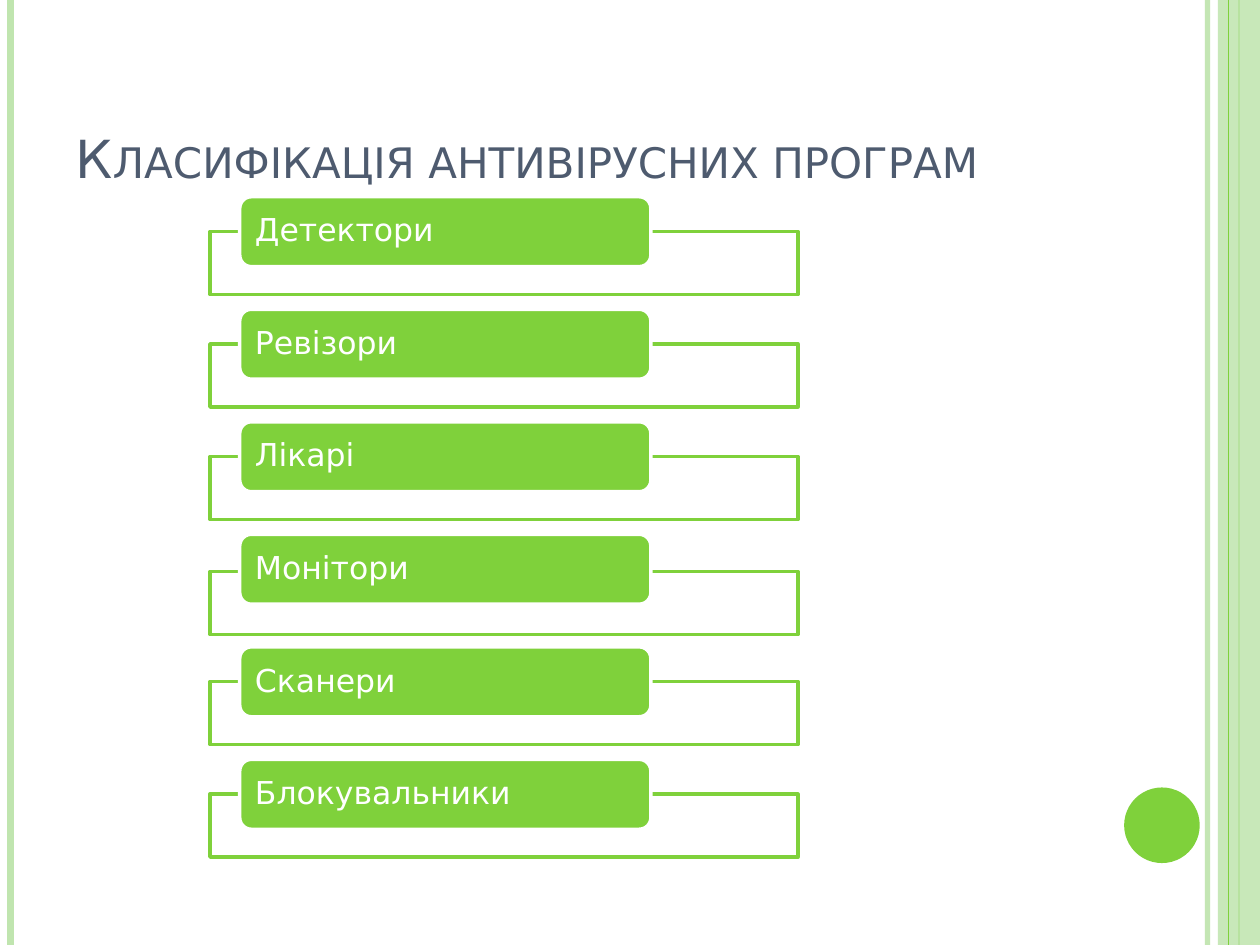
from lxml import etree
from pptx import Presentation
from pptx.dml.color import RGBColor
from pptx.enum import shapes, text
from pptx.oxml.ns import qn
from pptx.util import Pt

TITLE = "Класифікація антивірусних програм"
# Label and the downward shift of its frame
CLASSES = [
    ("Детектори", 0), ("Ревізори", 0), ("Лікарі", 0),
    ("Монітори", 1.4), ("Сканери", 0), ("Блокувальники", 0),
]
THEME = {
    "font": "DejaVu Sans", "title_size": 30, "label_size": 18,
    "green": "7FD13B", "pale": "C0E5AF", "slate": "4E5B6F", "white": "FFFFFF",
}
SLIDE_WIDTH, SLIDE_HEIGHT = 720, 540
# x, colour, width, opacity in percent
OUTER_RULES = [(690, "pale", 3, 93), (6, "pale", 4.5, 100), (708, "green", 1.5, 100)]
INNER_RULE = (702, "green", 0.75, 100)
SIDE_BAND = (696, 0, 24, SLIDE_HEIGHT)
DOT = (642.4, 450, 43.2, 43.2)
TITLE_BOX = (36, 21.6, 588, 90)
FRAME = (120, 132.3, 336, 36)
LABEL = (137, 112.4, 235, 40)
PITCH = 64.3


def color(name):
    return RGBColor.from_string(THEME[name])


def set_opacity(fill_parent, percent):
    if percent < 100:
        tint = fill_parent.find(".//" + qn("a:srgbClr"))
        etree.SubElement(tint, qn("a:alpha"), val=str(percent * 1000))


def add_rule(slide, x, name, width, opacity):
    rule = slide.shapes.add_connector(
        shapes.MSO_CONNECTOR.STRAIGHT, Pt(x), Pt(0), Pt(x), Pt(SLIDE_HEIGHT))
    rule.line.color.rgb = color(name)
    rule.line.width = Pt(width)
    properties = rule._element.spPr
    set_opacity(properties, opacity)
    etree.SubElement(properties, qn("a:effectLst"))


def add_box(slide, kind, box, fill, line=None, opacity=100):
    shape = slide.shapes.add_shape(kind, *map(Pt, box))
    shape.shadow.inherit = False
    shape.fill.solid()
    shape.fill.fore_color.rgb = color(fill)
    set_opacity(shape._element.spPr, opacity)
    if line:
        shape.line.color.rgb = color(line)
        shape.line.width = Pt(2)
    else:
        shape.line.fill.background()
    return shape


def write(shape, words, size, name, anchor):
    frame = shape.text_frame
    frame.word_wrap = True
    frame.vertical_anchor = anchor
    paragraph = frame.paragraphs[0]
    paragraph.text = words
    paragraph.alignment = text.PP_ALIGN.LEFT
    paragraph.font.name = THEME["font"]
    paragraph.font.size = Pt(THEME[size])
    paragraph.font.color.rgb = color(name)
    return paragraph


def add_class(slide, row, words, shift):
    left, top, width, height = FRAME
    add_box(slide, shapes.MSO_SHAPE.RECTANGLE,
            (left, top + row * PITCH + shift, width, height), "white", "green", 90)
    left, top, width, height = LABEL
    label = add_box(slide, shapes.MSO_SHAPE.ROUNDED_RECTANGLE,
                    (left, top + row * PITCH, width, height), "green", "white")
    frame = label.text_frame
    frame.margin_left = frame.margin_right = Pt(6.8)
    frame.margin_top = frame.margin_bottom = Pt(0)
    paragraph = write(label, words, "label_size", "white", text.MSO_ANCHOR.MIDDLE)
    paragraph.line_spacing = 0.9


def main():
    presentation = Presentation()
    presentation.slide_width = Pt(SLIDE_WIDTH)
    presentation.slide_height = Pt(SLIDE_HEIGHT)
    slide = presentation.slides.add_slide(presentation.slide_layouts[6])

    for rule in OUTER_RULES:
        add_rule(slide, *rule)
    add_box(slide, shapes.MSO_SHAPE.RECTANGLE, SIDE_BAND, "pale", opacity=87)
    add_rule(slide, *INNER_RULE)
    add_box(slide, shapes.MSO_SHAPE.OVAL, DOT, "green")

    title = slide.shapes.add_textbox(*map(Pt, TITLE_BOX))
    paragraph = write(title, TITLE, "title_size", "slate", text.MSO_ANCHOR.BOTTOM)
    paragraph.font._element.set("cap", "small")

    for row, (words, shift) in enumerate(CLASSES):
        add_class(slide, row, words, shift)
    presentation.save("out.pptx")


if __name__ == "__main__":
    main()
